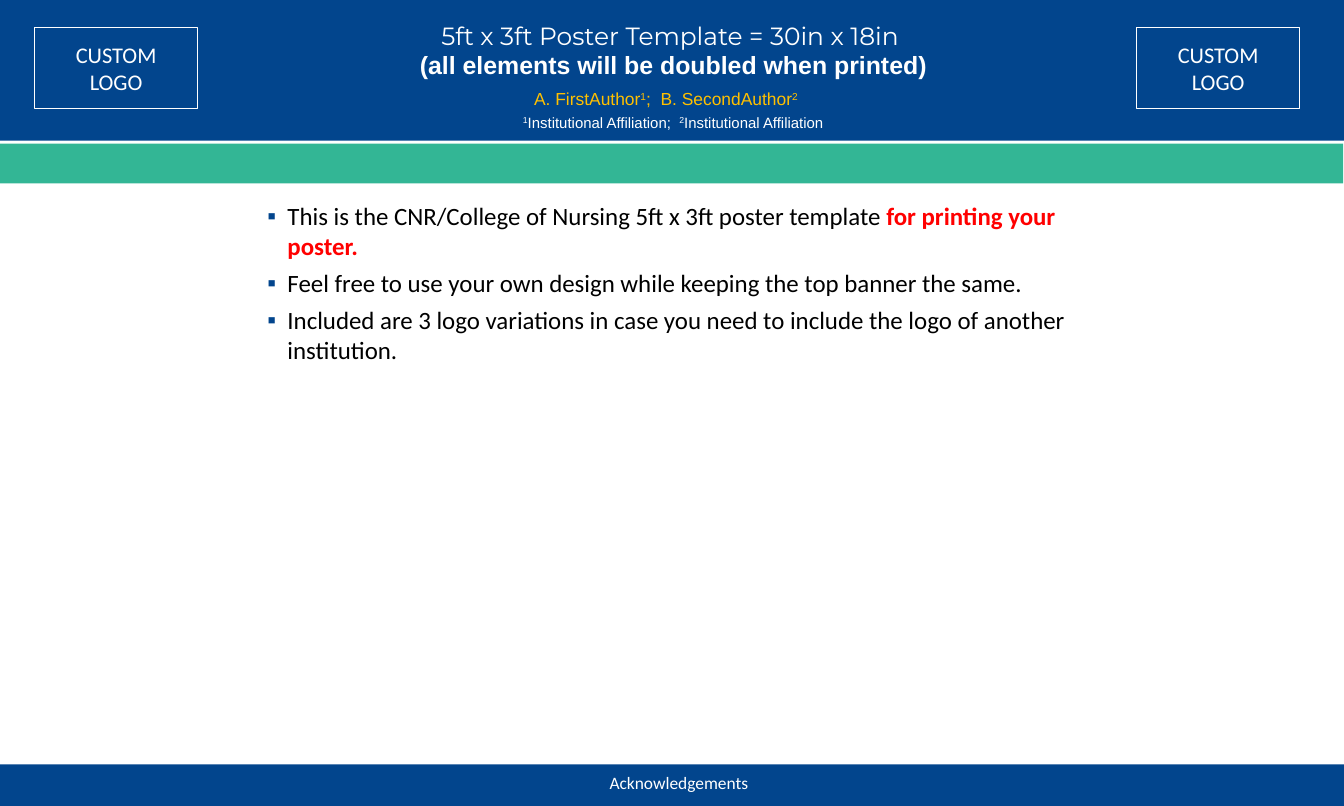
from lxml import etree
from pptx import Presentation
from pptx import util as u
from pptx.dml.color import RGBColor
from pptx.enum import shapes, text
from pptx.oxml.ns import qn

NAVY, TEAL, WHITE, GOLD, BLACK, RED = "02458D", "33B695", "FFFFFF", "FFC000", "000000", "FF0000"
SUPERSCRIPT = {"raised": True}

# Content: each paragraph is a list of (text, format) runs; "\v" breaks a line
TITLE = [[("5ft x 3ft Poster Template = 30in x 18in \v", {"font": "Montserrat"}),
          ("(all elements will be doubled when printed)", {"bold": True})]]
AUTHORS = [[("A. FirstAuthor", {}), ("1", SUPERSCRIPT),
            (";  B. SecondAuthor", {}), ("2", SUPERSCRIPT)]]
AFFILIATIONS = [[("1", SUPERSCRIPT), ("Institutional Affiliation;  ", {}),
                 ("2", SUPERSCRIPT), ("Institutional Affiliation", {})]]
GUIDELINES = [
    [("This is the CNR/College of Nursing 5ft x 3ft poster template ", {}),
     ("for printing your poster.", {"color": RED, "bold": True})],
    [("Feel free to use your own design while keeping the top banner the same.", {})],
    [("Included are 3 logo variations in case you need to include the logo of another "
      "institution.", {})],
]
LOGO = [[("CUSTOM", {})], [("LOGO", {})]]
ACKNOWLEDGEMENTS = [[("Acknowledgements", {})]]

# Layout in centimetres
WIDTH, HEIGHT = 76.2, 45.72
BANNER_HEIGHT, FOOTER_HEIGHT = 7.98, 2.36
LOGO_LEFTS, LOGO_TOP, LOGO_WIDTH, LOGO_HEIGHT = (1.96, 64.44), 1.57, 9.25, 4.55
BULLET_INDENT = 1.14


def rgb(color):
    return RGBColor.from_string(color)


def add_bullet(paragraph, character, color):
    properties = paragraph._p.get_or_add_pPr()
    properties.set("marL", str(u.Cm(BULLET_INDENT)))
    properties.set("indent", str(-u.Cm(BULLET_INDENT)))
    bullet_color = etree.SubElement(properties, qn("a:buClr"))
    etree.SubElement(bullet_color, qn("a:srgbClr"), val=color)
    etree.SubElement(properties, qn("a:buFont"), typeface="Arial")
    etree.SubElement(properties, qn("a:buChar"), char=character)


def add_run(paragraph, words, size, color, font="Calibri", bold=False, raised=False):
    run = paragraph.add_run()
    run.text = words.rstrip("\v")
    run.font.name, run.font.size, run.font.bold = font, u.Pt(size), bold
    run.font.color.rgb = rgb(color)
    if raised:
        run.font._element.set("baseline", "30000")
    if words.endswith("\v"):
        paragraph.add_line_break()


def write(shape, paragraphs, align=text.PP_ALIGN.CENTER, anchor=text.MSO_ANCHOR.TOP,
          inset=True, line=None, after=None, bullet=None, **run_format):
    frame = shape.text_frame
    frame.word_wrap = True
    frame.auto_size = text.MSO_AUTO_SIZE.NONE
    frame.vertical_anchor = anchor
    if not inset:
        frame.margin_left = frame.margin_right = frame.margin_top = frame.margin_bottom = 0
    for index, runs in enumerate(paragraphs):
        paragraph = frame.add_paragraph() if index else frame.paragraphs[0]
        paragraph.alignment = align
        if line:
            paragraph.line_spacing = u.Pt(line)
        if after:
            paragraph.space_after = u.Pt(after)
        if bullet:
            add_bullet(paragraph, bullet, NAVY)
        for words, changes in runs:
            add_run(paragraph, words, **{**run_format, **changes})


def add_box(slide, left, top, width, height, fill=None, outline=None):
    box = slide.shapes.add_shape(shapes.MSO_SHAPE.RECTANGLE,
                                 *map(u.Cm, (left, top, width, height)))
    box.shadow.inherit = False
    if fill:
        box.fill.solid()
        box.fill.fore_color.rgb = rgb(fill)
    else:
        box.fill.background()
    if outline:
        box.line.color.rgb = rgb(outline)
        box.line.width = u.Pt(1)
    else:
        box.line.fill.background()
    return box


def add_text(slide, left, top, width, height, paragraphs, **options):
    box = slide.shapes.add_textbox(*map(u.Cm, (left, top, width, height)))
    write(box, paragraphs, **options)


def main():
    presentation = Presentation()
    presentation.slide_width, presentation.slide_height = u.Cm(WIDTH), u.Cm(HEIGHT)
    slide = presentation.slides.add_slide(presentation.slide_layouts[5])

    # Bands
    add_box(slide, 0, 0, WIDTH, BANNER_HEIGHT, fill=NAVY)
    add_box(slide, 0, 8.15, 76.15, 2.26, fill=TEAL)
    add_box(slide, 0, HEIGHT - FOOTER_HEIGHT, WIDTH, FOOTER_HEIGHT, fill=NAVY)

    # Title, brought in front of the banner
    title = slide.shapes.title
    title.left, title.top, title.width, title.height = map(u.Cm, (13.03, 1.22, 50.29, 5.03))
    slide.shapes._spTree.append(title._element)
    write(title, TITLE, inset=False, line=47, size=40, color=WHITE, font="Arial")

    # Authors and affiliations
    byline = {"anchor": text.MSO_ANCHOR.MIDDLE, "inset": False, "font": "Arial"}
    add_text(slide, 29.87, 5.05, 15.77, 1.14, AUTHORS, line=32, size=28, color=GOLD, **byline)
    add_text(slide, 22, 6.63, 32.33, 0.81, AFFILIATIONS, line=23, size=24, color=WHITE, **byline)

    # Logo frames
    for left in LOGO_LEFTS:
        frame = add_box(slide, left, LOGO_TOP, LOGO_WIDTH, LOGO_HEIGHT, outline=WHITE)
        write(frame, LOGO, anchor=text.MSO_ANCHOR.MIDDLE, size=36, color=WHITE)

    # Body and footer
    add_text(slide, 14.91, 11.25, 46.23, 9.65, GUIDELINES, align=text.PP_ALIGN.LEFT,
             after=12, bullet="▪", size=40, color=BLACK)
    add_text(slide, 5.66, 43.69, 65.66, 1.45, ACKNOWLEDGEMENTS, size=28, color=WHITE)

    presentation.save("out.pptx")


if __name__ == "__main__":
    main()
